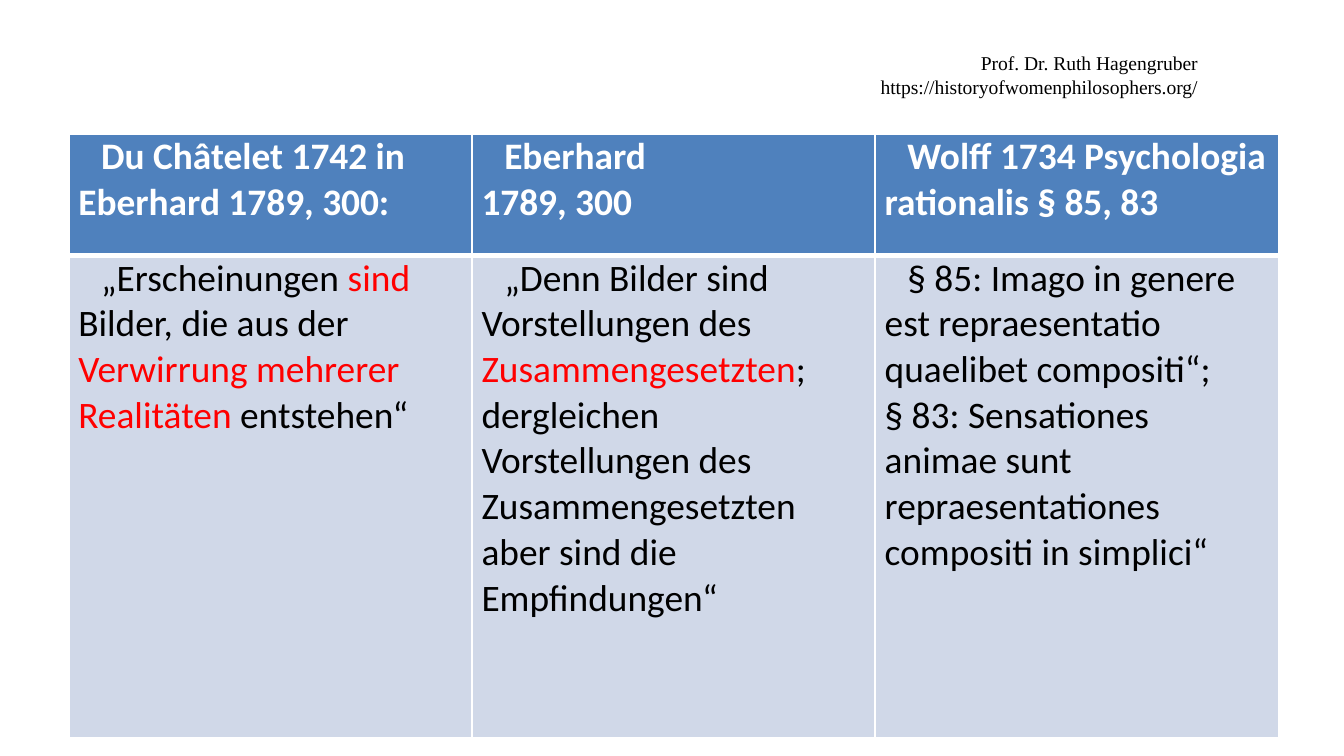
from lxml.etree import SubElement
from pptx import Presentation
from pptx.dml.color import RGBColor
from pptx.enum.text import PP_ALIGN as Align
from pptx.oxml.ns import qn
from pptx.util import Cm, Pt

WHITE = RGBColor(0xFF, 0xFF, 0xFF)
BLACK = RGBColor(0, 0, 0)
RED = RGBColor(0xFF, 0, 0)
BLUE = RGBColor(0x4F, 0x81, 0xBD)
PALE = RGBColor(0xD0, 0xD8, 0xE8)

HEADS = [
    "Du Châtelet 1742 in Eberhard 1789, 300:",
    "Eberhard \n1789, 300",
    "Wolff 1734 Psychologia rationalis § 85, 83",
]
# Text between bars is red.
QUOTES = [
    "„Erscheinungen |sind |Bilder, die aus der "
    "|Verwirrung mehrerer Realitäten |entstehen“",
    "„Denn Bilder sind Vorstellungen des |Zusammengesetzten|; dergleichen "
    "Vorstellungen des Zusammengesetzten aber sind die Empfindungen“",
    "§ 85: Imago in genere est repraesentatio quaelibet compositi“; \n"
    "§ 83: Sensationes animae sunt repraesentationes compositi in simplici“",
]


def style(font, name, size, color, bold=False):
    font.name, font.size, font.bold = name, Pt(size), bold
    font.color.rgb = color


def add_credit(slide, left, top, width, height):
    frame = slide.shapes.add_textbox(left, top, width, height).text_frame
    frame.word_wrap = True
    frame.text = "Prof. Dr. Ruth Hagengruber https://historyofwomenphilosophers.org/"
    para = frame.paragraphs[0]
    para.alignment = Align.RIGHT
    style(para.runs[0].font, "Times New Roman", 10.5, BLACK)


def add_edges(cell, widths):
    """Draw white borders; widths are points for left, right, top, bottom."""
    props = cell._tc.get_or_add_tcPr()
    for side, width in zip("LRTB", widths):
        line = SubElement(props, qn(f"a:ln{side}"), w=str(Pt(width)))
        fill = SubElement(line, qn("a:solidFill"))
        SubElement(fill, qn("a:srgbClr"), val=str(WHITE))


def fill_cell(cell, text, color, back, bold, edges):
    cell.margin_left = cell.margin_right = Cm(0.18)
    cell.margin_top = cell.margin_bottom = 0
    add_edges(cell, edges)
    cell.fill.solid()
    cell.fill.fore_color.rgb = back
    para = cell.text_frame.paragraphs[0]
    para._p.get_or_add_pPr().set("indent", str(Cm(0.43)))
    for i, part in enumerate(text.split("|")):
        for j, line in enumerate(part.split("\n")):
            if j:
                para.add_line_break()
            run = para.add_run()
            run.text = line
            style(run.font, "Calibri", 20, RED if i % 2 else color, bold)


def add_quotes(slide, left, top, width, height):
    table = slide.shapes.add_table(2, len(HEADS), left, top, width, height).table
    table.rows[0].height = Cm(2.29)
    table.rows[1].height = height - Cm(2.29)
    for col, (head, quote) in enumerate(zip(HEADS, QUOTES)):
        table.columns[col].width = width // len(HEADS)
        fill_cell(table.cell(0, col), head, WHITE, BLUE, True, (1, 1, 1, 3))
        fill_cell(table.cell(1, col), quote, BLACK, PALE, False, (1, 1, 3, 1))


def main():
    deck = Presentation()
    deck.slide_width, deck.slide_height = Cm(25.4), Cm(14.29)
    slide = deck.slides.add_slide(deck.slide_layouts[6])
    add_credit(slide, Cm(15.09), Cm(0.84), Cm(7.8), Cm(1.14))
    add_quotes(slide, Cm(1.3), Cm(2.54), Cm(22.86), Cm(11.4))
    deck.save("out.pptx")


if __name__ == "__main__":
    main()
